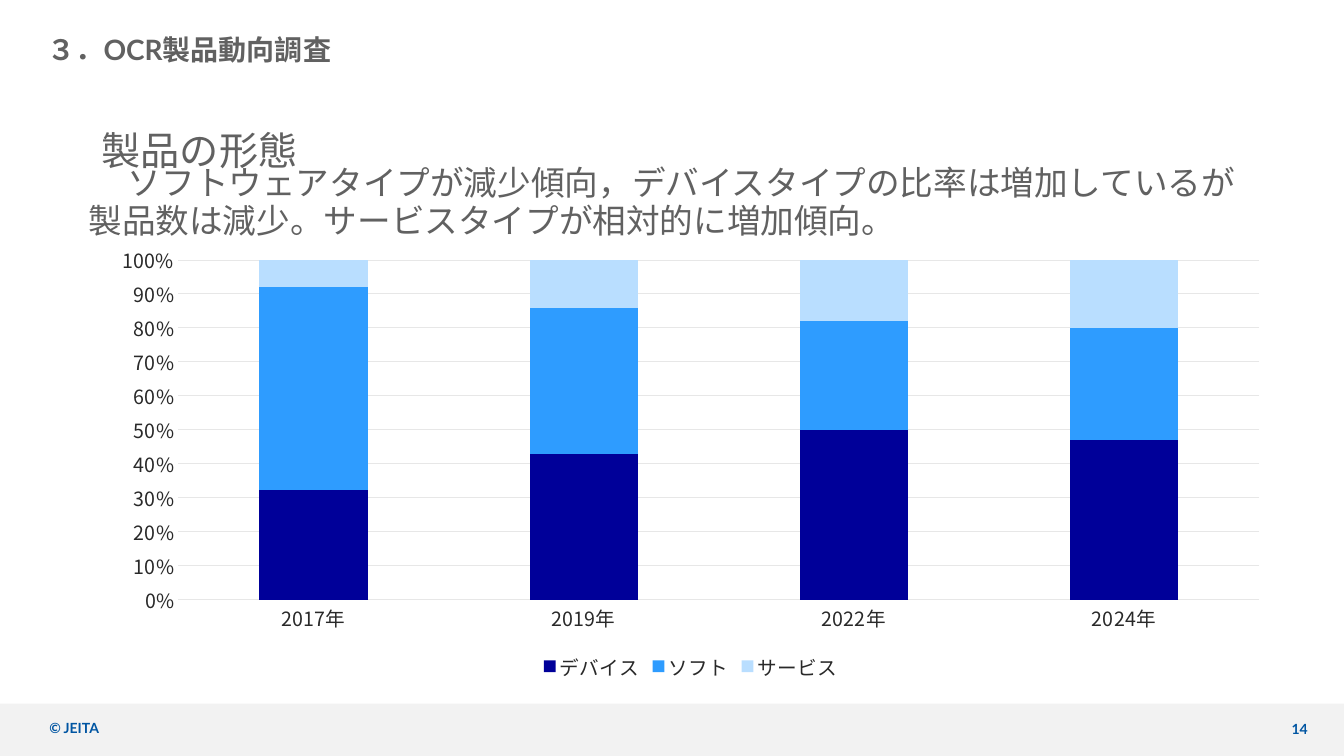
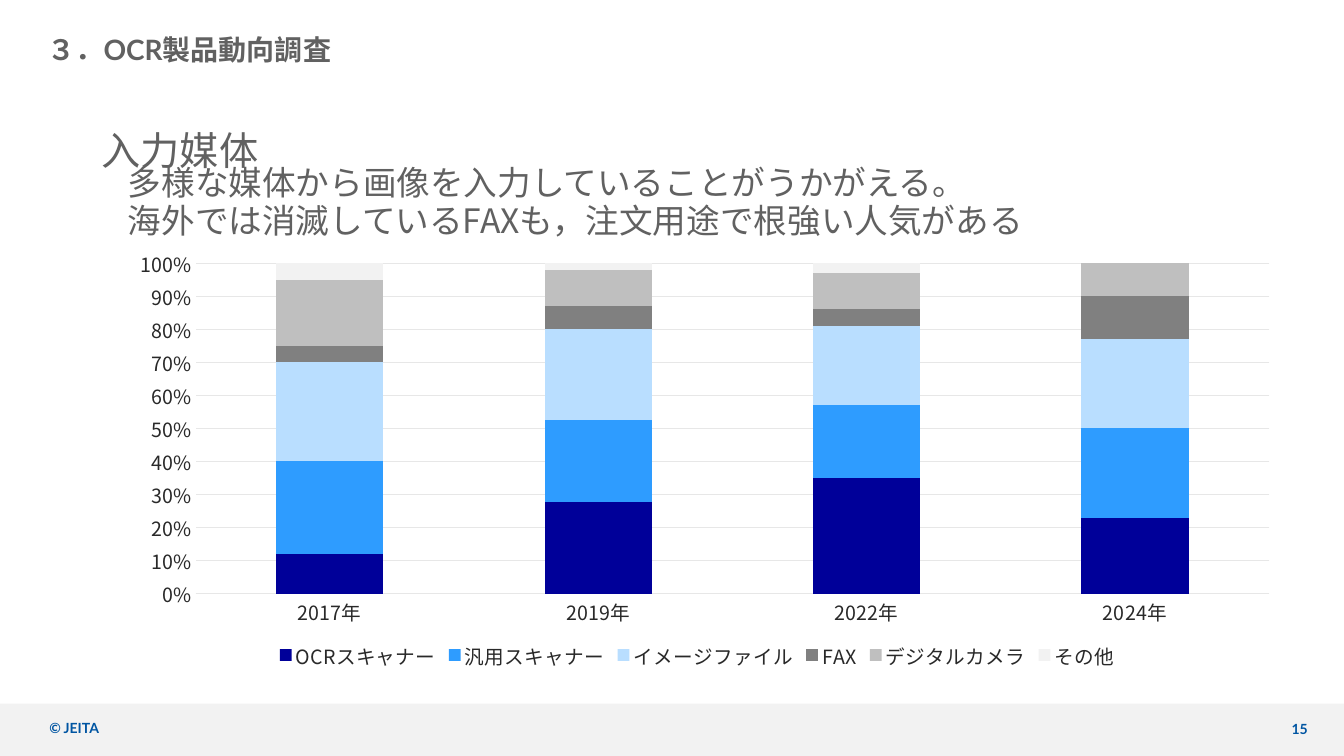
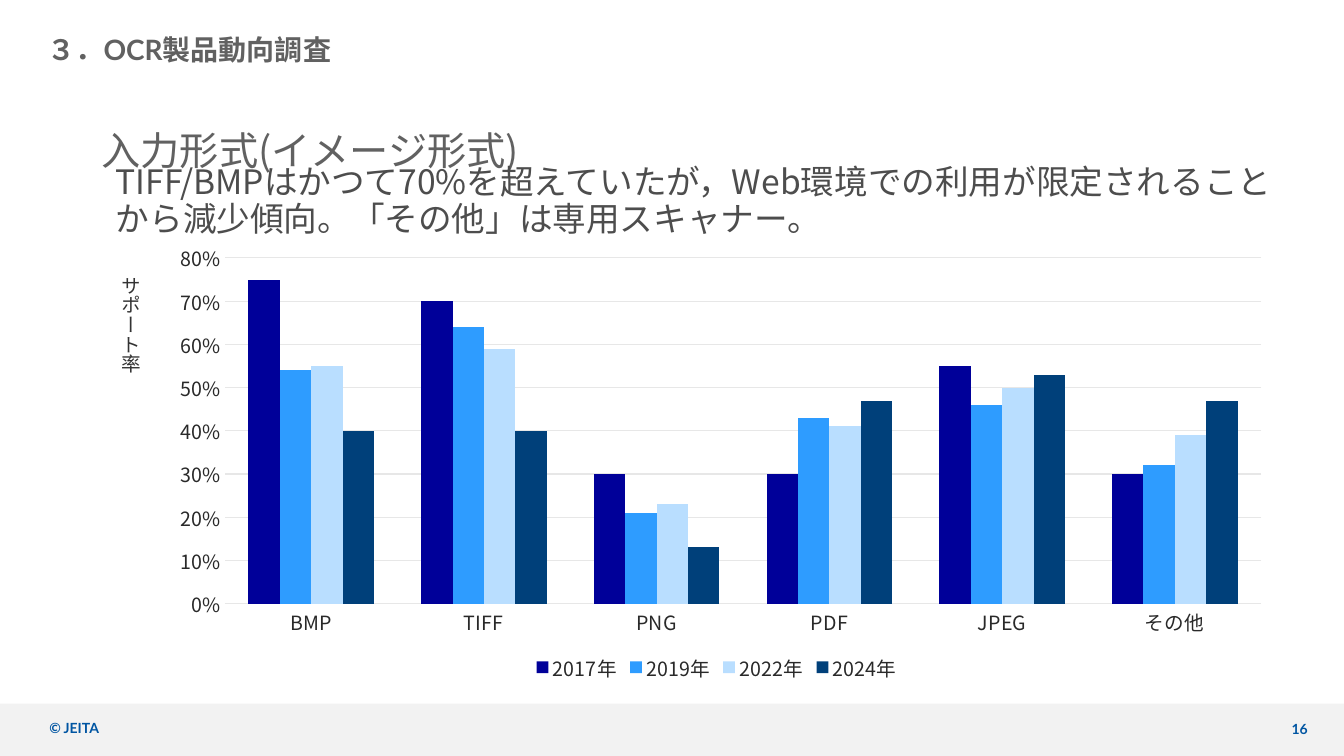
from dataclasses import dataclass

from lxml.etree import Element, SubElement
from pptx import Presentation
from pptx.chart.data import CategoryChartData as ChartData
from pptx.dml.color import RGBColor as RGB
from pptx.enum.chart import XL_CHART_TYPE as Kind
from pptx.enum.chart import XL_LEGEND_POSITION as Place
from pptx.enum.chart import XL_TICK_MARK as Tick
from pptx.enum.shapes import MSO_SHAPE as Form
from pptx.enum.text import MSO_ANCHOR as Anchor
from pptx.enum.text import MSO_AUTO_SIZE as Fit
from pptx.enum.text import PP_ALIGN as Align
from pptx.oxml.ns import qn
from pptx.util import Pt

SCALE = 9144  # EMU in one px, 100 px to the inch
WIDE, HIGH = 1333, 750
FIRST = 14


@dataclass(frozen=True)
class Theme:
    latin: str = "Lato"
    asian: str = "Noto Sans CJK JP"
    text: str = "616161"
    dark: str = "4D4D4D"
    label: str = "333333"
    axis: str = "292929"
    grid: str = "E7E7E7"
    band: str = "F2F2F2"
    brand: str = "0055A2"
    blues: tuple = ("000099", "2E9CFF", "B9DEFF")
    grays: tuple = ("808080", "BFBFBF", "F2F2F2")
    navy: str = "00407A"
    title: int = 20
    head: int = 28
    body: int = 24
    small: int = 14
    foot: int = 10


T = Theme()
YEARS = ("2017年", "2019年", "2022年", "2024年")


def px(*sizes):
    return [size * SCALE for size in sizes]


def put(target, **values):
    for name, value in values.items():
        setattr(target, name, value)


def style(font, size, color, name=T.asian, bold=False):
    put(font, size=Pt(size), name=name, bold=bold)
    font.color.rgb = RGB.from_string(color)


def pair(root):
    """Give each Latin font its East Asian partner."""
    for latin in list(root.iter(qn("a:latin"))):
        latin.addnext(Element(qn("a:ea"), typeface=T.asian))


def fill(target, color):
    target.fill.solid()
    target.fill.fore_color.rgb = RGB.from_string(color)


def write(frame, lines, look, anchor=Anchor.TOP, **form):
    put(frame, word_wrap=True, auto_size=Fit.NONE, vertical_anchor=anchor)
    for i, line in enumerate(lines):
        para = frame.add_paragraph() if i else frame.paragraphs[0]
        put(para, **form)
        run = para.add_run()
        run.text = line
        style(run.font, **look)
    return frame


def add_text(slide, box, lines, look, **form):
    shape = slide.shapes.add_textbox(*px(*box))
    write(shape.text_frame, lines, look, **form)
    return shape


def indent(shape, size):
    for para in shape.text_frame.paragraphs:
        props = para._p.get_or_add_pPr()
        props.set("marL", "0")
        props.set("indent", str(*px(size)))


def add_title(slide, text):
    title = slide.shapes.title
    names = ("left", "top", "width", "height")
    put(title, **dict(zip(names, px(37, 34, 1122, 35))))
    look = dict(size=T.title, color=T.text, name=T.latin, bold=True)
    write(title.text_frame, [text], look, Anchor.MIDDLE,
          alignment=Align.LEFT, line_spacing=0.9)


def add_foot(slide, page):
    band = slide.shapes.add_shape(Form.RECTANGLE, *px(0, 698, WIDE, 52))
    band.shadow.inherit = False
    band.line.fill.background()
    fill(band, T.band)
    look = dict(size=T.foot, color=T.brand, name=T.latin, bold=True)
    add_text(slide, (39, 714, 378, 17), ["© JEITA"], look, anchor=Anchor.MIDDLE)
    add_text(slide, (1007, 703, 300, 40), [str(page)], look,
             anchor=Anchor.MIDDLE, alignment=Align.RIGHT)


def add_page(deck, page, head):
    """Start a slide with the title, footer and heading that all share."""
    slide = deck.slides.add_slide(deck.slide_layouts[5])
    add_foot(slide, page)
    add_title(slide, "３．OCR製品動向調査")
    add_text(slide, (91, 70, 1164, 89), [head],
             dict(size=T.head, color=T.text), line_spacing=Pt(70))
    return slide


def add_lead(slide, lines):
    lead = add_text(slide, (78, 118, 1177, 125), lines,
                    dict(size=T.body, color=T.text),
                    anchor=Anchor.BOTTOM, line_spacing=Pt(27))
    indent(lead, 39)


def set_plot(chart, box, area):
    """Fix the inner plot area, given in slide px."""
    layout = Element(qn("c:layout"))
    manual = SubElement(layout, qn("c:manualLayout"))
    left, top, width, height = box
    x, y, w, h = area
    values = dict(layoutTarget="inner", xMode="edge", yMode="edge",
                  x=(x - left) / width, y=(y - top) / height,
                  w=w / width, h=h / height)
    for name, value in values.items():
        SubElement(manual, qn(f"c:{name}"), val=str(value))
    plot = chart.element.find(".//" + qn("c:plotArea"))
    for old in plot.findall(qn("c:layout")):
        plot.remove(old)
    plot.insert(0, layout)


def add_bars(slide, kind, box, area, cats, rows, colors):
    data = ChartData()
    data.categories = cats
    for name, values in rows.items():
        data.add_series(name, values)
    chart = slide.shapes.add_chart(kind, *px(*box), data).chart
    style(chart.font, T.small, T.axis)
    put(chart, has_title=False, has_legend=True)
    put(chart.legend, position=Place.BOTTOM, include_in_layout=False)
    put(chart.plots[0], gap_width=150, vary_by_categories=False)
    for series, color in zip(chart.plots[0].series, colors):
        fill(series.format, color)
        series.invert_if_negative = False

    value, group = chart.value_axis, chart.category_axis
    for axis in (value, group):
        put(axis, major_tick_mark=Tick.NONE, minor_tick_mark=Tick.NONE)
    put(value.tick_labels, number_format="0%", number_format_is_linked=False)
    value.format.line.fill.background()
    for line in (value.major_gridlines.format.line, group.format.line):
        line.color.rgb = RGB.from_string(T.grid)
        line.width = Pt(0.75)
    set_plot(chart, box, area)
    pair(chart.element)
    return chart


def add_types(deck, page):
    slide = add_page(deck, page, "製品の形態")
    rows = {
        "デバイス": (32, 43, 50, 47),
        "ソフト": (59, 43, 32, 33),
        "サービス": (8, 14, 18, 20),
    }
    add_bars(slide, Kind.COLUMN_STACKED_100, (97, 235, 1176, 444),
             (177, 258, 1072, 337), YEARS, rows, T.blues)
    add_lead(slide, ["ソフトウェアタイプが減少傾向，デバイスタイプの比率は増加しているが"
                     "製品数は減少。サービスタイプが相対的に増加傾向。"])
    return slide


def add_media(deck, page):
    slide = add_page(deck, page, "入力媒体")
    rows = {
        "OCRスキャナー": (12, 28, 35, 23),
        "汎用スキャナー": (28, 25, 22, 27),
        "イメージファイル": (30, 28, 24, 27),
        "FAX": (5, 7, 5, 13),
        "デジタルカメラ": (20, 11, 11, 10),
        "その他": (5, 2, 3, 0),
    }
    add_bars(slide, Kind.COLUMN_STACKED_100, (109, 242, 1165, 426),
             (194, 261, 1065, 328), YEARS, rows, T.blues + T.grays)
    add_lead(slide, ["多様な媒体から画像を入力していることがうかがえる。",
                     "海外では消滅しているFAXも，注文用途で根強い人気がある"])
    return slide


def add_formats(deck, page):
    slide = add_page(deck, page, "入力形式(イメージ形式)")
    rates = (
        (0.75, 0.7, 0.3, 0.3, 0.55, 0.3),
        (0.54, 0.64, 0.21, 0.43, 0.46, 0.32),
        (0.55, 0.59, 0.23, 0.41, 0.5, 0.39),
        (0.4, 0.4, 0.13, 0.47, 0.53, 0.47),
    )
    chart = add_bars(slide, Kind.COLUMN_CLUSTERED, (146, 236, 1130, 444),
                     (223, 256, 1028, 343),
                     ("BMP", "TIFF", "PNG", "PDF", "JPEG", "その他"),
                     dict(zip(YEARS, rates)), T.blues + (T.navy,))
    put(chart.value_axis, minimum_scale=0, maximum_scale=0.8, major_unit=0.1)
    label = add_text(slide, (102, 264, 44, 167), ["サポート率"],
                     dict(size=T.small, color=T.label))
    label.element.find(".//" + qn("a:bodyPr")).set("vert", "eaVert")
    add_text(slide, (105, 159, 1192, 90),
             ["TIFF/BMPはかつて70%を超えていたが，Web環境での利用が限定される"
              "ことから減少傾向。「その他」は専用スキャナー。"],
             dict(size=T.body, color=T.dark), line_spacing=Pt(26))
    return slide


def main():
    deck = Presentation()
    deck.slide_width, deck.slide_height = px(WIDE, HIGH)
    for page, build in enumerate((add_types, add_media, add_formats), FIRST):
        pair(build(deck, page).element)
    deck.save("out.pptx")


if __name__ == "__main__":
    main()
